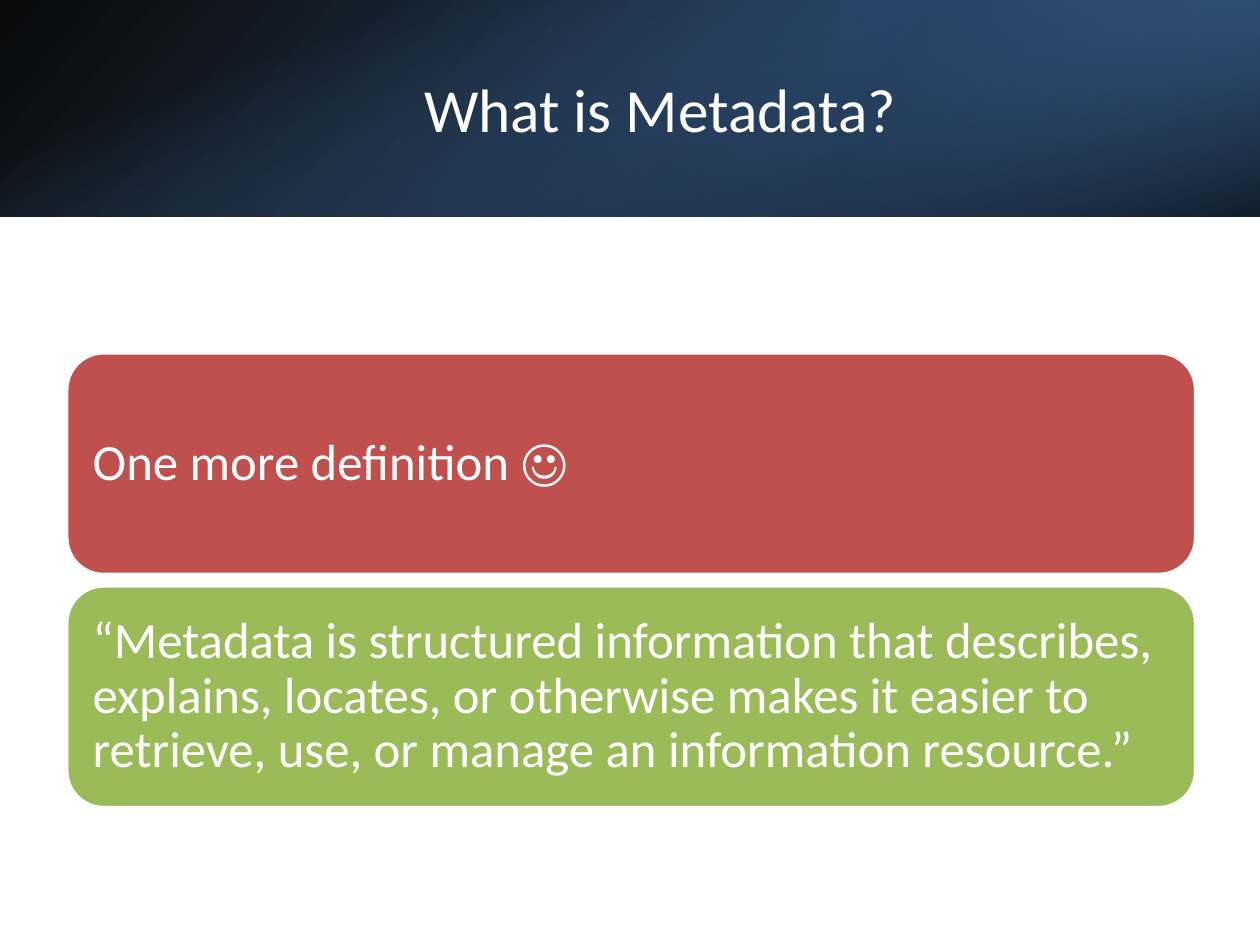
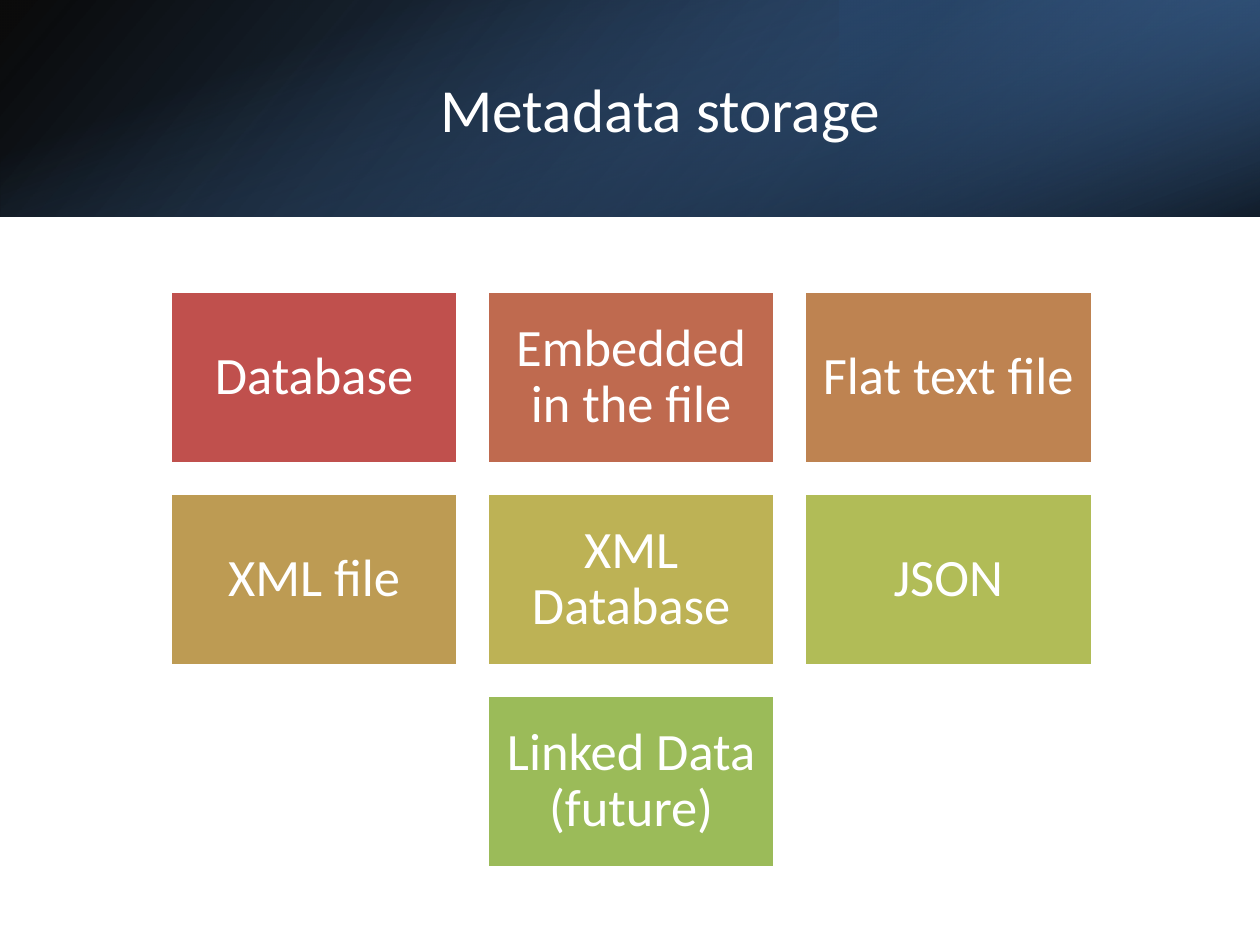
from collections import namedtuple

from pptx import Presentation
from pptx.dml.color import RGBColor
from pptx.enum.shapes import MSO_SHAPE as Shape
from pptx.enum.text import MSO_ANCHOR as Anchor, MSO_AUTO_SIZE as AutoSize, PP_ALIGN as Align
from pptx.oxml import parse_xml
from pptx.oxml.ns import nsdecls, qn
from pptx.util import Inches, Pt

# Every length is counted in cells of a grid of 100 columns by 75 rows
COLUMNS, ROWS = 100, 75
CELL = Inches(10) // COLUMNS
FONT = "Calibri"
TITLE_ONLY = 5

COLORS = {
    "white": "FFFFFF", "black": "000000",
    "navy": "254061", "steel": "376092", "sky": "4F81BD",
    "red": "C0504D", "rust": "BF6A4F", "copper": "BE8351", "ochre": "BD9B53",
    "olive": "BDB255", "lime": "B1BC57", "green": "9BBB59",
}

Box = namedtuple("Box", "left top width height")
BAND = Box(0, 0, COLUMNS, 17.2)
TITLE = Box(11.2, 3.8, 82.4, 9.6)
DEFINITIONS = Box(5.3, 28, 89.6, 36.1)
STORAGE = Box(13.5, 23.1, 73.2, 45.8)


def rgb(name):
    return RGBColor.from_string(COLORS[name])


def emu(box):
    return [round(length * CELL) for length in box]


def format_text(frame, text, size, align, line_spacing=None):
    frame.text = text
    frame.word_wrap = True
    frame.auto_size = AutoSize.NONE
    frame.vertical_anchor = Anchor.MIDDLE
    paragraph = frame.paragraphs[0]
    paragraph.alignment = align
    paragraph.line_spacing = line_spacing
    for run in paragraph.runs:
        run.font.name, run.font.size = FONT, Pt(size)
        run.font.color.rgb = rgb("white")


def add_gradient(slide, box, stops, angle, rotation=0, flip=False):
    """Add a rectangle whose stops are (position %, colour, opacity %)."""
    layer = slide.shapes.add_shape(Shape.RECTANGLE, *emu(box))
    layer.shadow.inherit = False
    layer.line.fill.background()
    layer.rotation = rotation
    properties = layer.element.spPr
    if flip:
        properties.find(qn("a:xfrm")).set("flipH", "1")
    stop_xml = "".join(
        f'<a:gs pos="{position * 1000}"><a:srgbClr val="{COLORS[color]}">'
        f'<a:alpha val="{opacity * 1000}"/></a:srgbClr></a:gs>'
        for position, color, opacity in stops)
    layer.fill.gradient()
    properties.replace(properties.find(qn("a:gradFill")), parse_xml(
        f'<a:gradFill {nsdecls("a")} rotWithShape="1"><a:gsLst>{stop_xml}</a:gsLst>'
        f'<a:lin ang="{angle * 60000}" scaled="0"/></a:gradFill>'))


def add_band(slide, box):
    """Lay three gradients over each other across the top of the slide."""
    left, top, width, height = box
    add_gradient(slide, box, [(0, "black", 96), (100, "steel", 100)], 140, flip=True)
    right_third = Box(left + width * 2 / 3, top, width / 3, height)
    add_gradient(slide, right_third, [(19, "navy", 68), (100, "sky", 79)], 320,
                 rotation=180, flip=True)
    # An upright strip, turned about its centre to fill the band
    shift = (width - height) / 2
    upright = Box(left + shift, top - shift, height, width)
    add_gradient(slide, upright, [(23, "sky", 0), (99, "black", 74)], 340, rotation=90)


def add_titled_slide(deck, text):
    slide = deck.slides.add_slide(deck.slide_layouts[TITLE_ONLY])
    add_band(slide, BAND)
    title = slide.shapes.title
    title.left, title.top, title.width, title.height = emu(TITLE)
    format_text(title.text_frame, text, 35, Align.CENTER)
    # Bring the title in front of the band
    slide.shapes.element.append(title.element)
    return slide


def add_card(slide, outline, box, text, color, size, align):
    card = slide.shapes.add_shape(outline, *emu(box))
    card.shadow.inherit = False
    card.fill.solid()
    card.fill.fore_color.rgb = rgb(color)
    card.line.color.rgb = rgb("white")
    card.line.width = Pt(2)
    frame = card.text_frame
    frame.margin_left = frame.margin_right = Inches(0.12)
    frame.margin_top = frame.margin_bottom = Inches(0.12)
    format_text(frame, text, size, align, line_spacing=0.9)


def add_definitions(slide, box, definitions, gap=0.9):
    """Stack one full-width rounded card per definition."""
    height = (box.height - gap * (len(definitions) - 1)) / len(definitions)
    for row, (text, color) in enumerate(definitions):
        place = Box(box.left, box.top + row * (height + gap), box.width, height)
        add_card(slide, Shape.ROUNDED_RECTANGLE, place, text, color, 29, Align.LEFT)


def add_storage_grid(slide, box, kinds, per_row=3, gap=2.3):
    """Fill rows of equal cards; a short last row is centred."""
    rows = [kinds[start:start + per_row] for start in range(0, len(kinds), per_row)]
    width = (box.width - gap * (per_row - 1)) / per_row
    height = (box.height - gap * (len(rows) - 1)) / len(rows)
    for row, members in enumerate(rows):
        indent = (per_row - len(members)) / 2
        for column, (text, color) in enumerate(members):
            place = Box(box.left + (indent + column) * (width + gap),
                        box.top + row * (height + gap), width, height)
            add_card(slide, Shape.RECTANGLE, place, text, color, 30, Align.CENTER)


def main():
    deck = Presentation()
    deck.slide_width, deck.slide_height = COLUMNS * CELL, ROWS * CELL

    add_definitions(add_titled_slide(deck, "What is Metadata?"), DEFINITIONS, [
        ("One more definition ☺", "red"),
        ("“Metadata is structured information that describes, explains, locates, "
         "or otherwise makes it easier to retrieve, use, or manage an information "
         "resource.”", "green"),
    ])

    add_storage_grid(add_titled_slide(deck, "Metadata storage"), STORAGE, [
        ("Database", "red"), ("Embedded in the file", "rust"), ("Flat text file", "copper"),
        ("XML file", "ochre"), ("XML Database", "olive"), ("JSON", "lime"),
        ("Linked Data (future)", "green"),
    ])

    deck.save("out.pptx")


if __name__ == "__main__":
    main()
